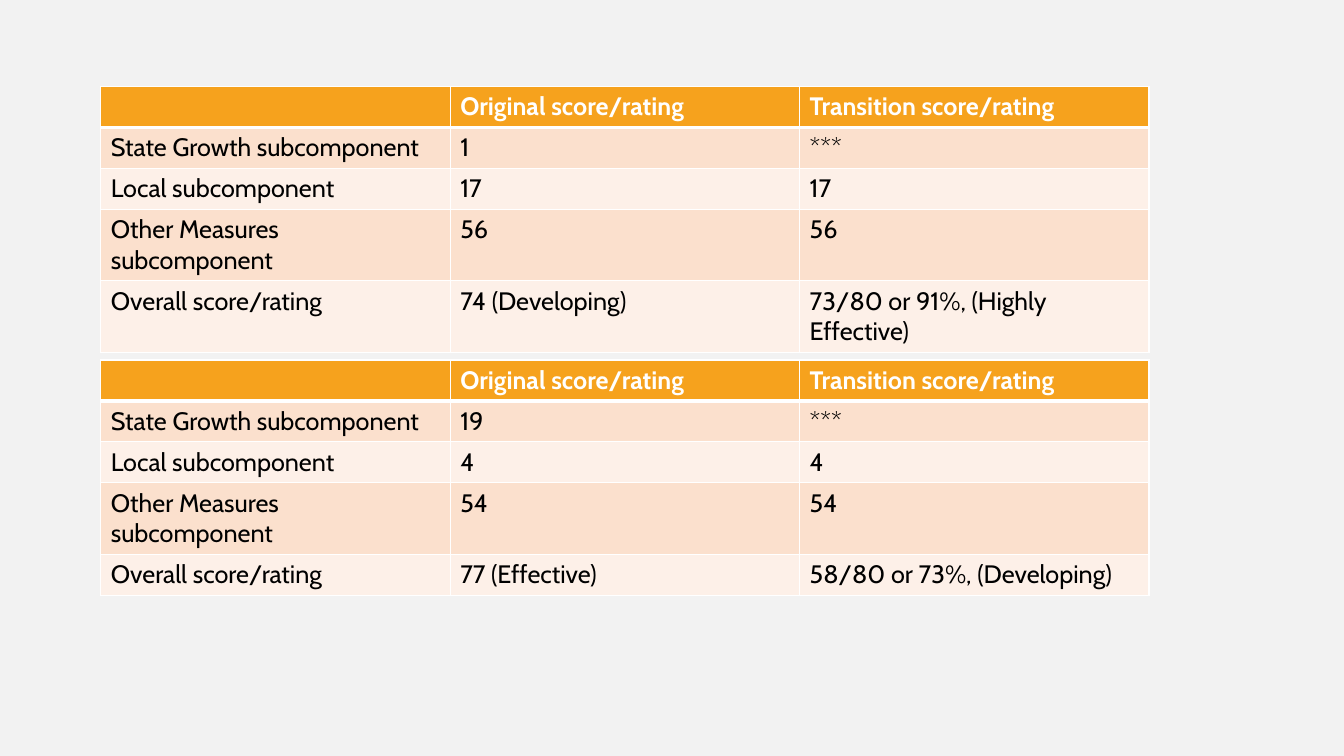
from lxml import etree
from pptx import Presentation
from pptx.dml.color import RGBColor
from pptx.oxml.ns import qn
from pptx.util import Pt

ORANGE, PEACH, CREAM = "F6A21D", "FBE0CD", "FDF0E8"
WHITE, BLACK, GREY = "FFFFFF", "000000", "F2F2F2"
COLUMN_WIDTH, ROW_HEIGHT = 249.6, 29.2
HEADER = ("", "Original score/rating", "Transition score/rating")
LABELS = (
    "State Growth subcomponent",
    "Local subcomponent",
    "Other Measures subcomponent",
    "Overall score/rating",
)
SCORE_TABLES = (
    (257.2, (("19", "***"), ("4", "4"), ("54", "54"),
             ("77 (Effective)", "58/80 or 73%, (Developing)"))),
    (61.8, (("1", "***"), ("17", "17"), ("56", "56"),
            ("74 (Developing)", "73/80 or 91%, (Highly Effective)"))),
)


def paint(fill, color):
    fill.solid()
    fill.fore_color.rgb = RGBColor.from_string(color)


def add_borders(cell, widths):
    properties = cell._tc.get_or_add_tcPr()
    for index, (side, width) in enumerate(widths.items()):
        line = etree.Element(qn("a:ln" + side), w=str(Pt(width)))
        solid = etree.SubElement(line, qn("a:solidFill"))
        etree.SubElement(solid, qn("a:srgbClr"), val=WHITE)
        properties.insert(index, line)


deck = Presentation()
deck.slide_width, deck.slide_height = Pt(960), Pt(540)
page = deck.slides.add_slide(deck.slide_layouts[6])
paint(page.background.fill, GREY)

for top, scores in SCORE_TABLES:
    rows = [HEADER] + [(label, *pair) for label, pair in zip(LABELS, scores)]
    table = page.shapes.add_table(
        len(rows), len(HEADER), Pt(72), Pt(top),
        Pt(COLUMN_WIDTH * len(HEADER)), Pt(ROW_HEIGHT * len(rows)),
    ).table
    for column in table.columns:
        column.width = Pt(COLUMN_WIDTH)
    for row_index, texts in enumerate(rows):
        table.rows[row_index].height = Pt(ROW_HEIGHT)
        is_header = row_index == 0
        background = ORANGE if is_header else PEACH if row_index % 2 else CREAM
        widths = {
            "L": 1,
            "R": 1,
            "T": 3 if row_index == 1 else 1,
            "B": 3 if is_header else 1,
        }
        for column_index, text in enumerate(texts):
            cell = table.cell(row_index, column_index)
            paint(cell.fill, background)
            add_borders(cell, widths)
            para = cell.text_frame.paragraphs[0]
            para.font.size = Pt(18)
            if text:
                span = para.add_run()
                span.text = text
                span.font.name = "Cabin"
                span.font.size = Pt(18)
                span.font.bold = is_header
                paint(span.font.fill, WHITE if is_header else BLACK)

deck.save("out.pptx")
